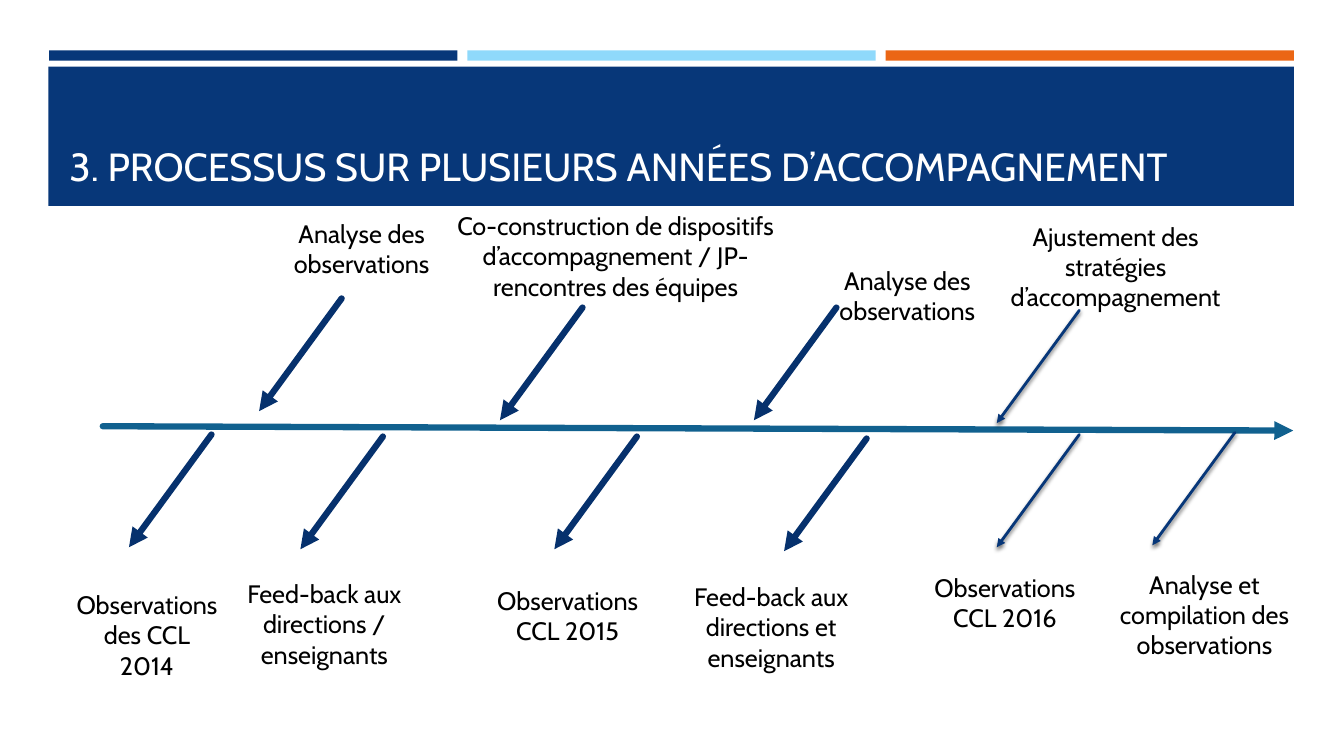
"""Build a slide showing a multi-year support process along a timeline."""
from dataclasses import dataclass

from lxml.etree import SubElement
from pptx import Presentation
from pptx.dml.color import RGBColor
from pptx.enum.shapes import MSO_CONNECTOR as Connector, MSO_SHAPE as Preset
from pptx.enum.text import MSO_ANCHOR as Anchor, MSO_AUTO_SIZE as AutoSize, PP_ALIGN as Align
from pptx.oxml.ns import qn
from pptx.slide import Slide
from pptx.util import Cm, Pt

COLORS = {
    "navy": "073779",
    "sky": "8FD9FB",
    "orange": "EB6615",
    "timeline": "11618F",
    "arrow": "06316D",
    "black": "000000",
    "white": "FFFFFF",
}
FONT = "Cabin"
BAR_LEFT, BAR_PITCH = 1.24, 10.54
ARROW_RUN, ARROW_DROP = -2.08, 2.84
LINE_HEIGHT, LABEL_PADDING = 0.77, 0.26


@dataclass(frozen=True)
class Box:
    left: float
    top: float
    width: float
    height: float


@dataclass(frozen=True)
class Label:
    text: str
    left: float
    top: float
    width: float = 5.03
    lines: int = 3


@dataclass(frozen=True)
class Step:
    label: Label
    arrow_left: float
    arrow_top: float
    thin: bool = False


STEPS = [
    Step(Label("Observations des CCL 2014", 1.65, 14.73, 4.11), 5.33, 10.95),
    Step(Label("Analyse des observations", 7.06, 5.38, 4.11, 2), 8.61, 7.52),
    Step(Label("Feed-back aux directions / enseignants", 5.66, 14.45), 9.65, 11),
    Step(Label("Co-construction de dispositifs d’accompagnement / JP-rencontres des équipes",
               10.69, 5.18, 9.65), 14.68, 7.75),
    Step(Label("Observations CCL 2015", 11.79, 14.63, lines=2), 16.05, 11),
    Step(Label("Analyse des observations", 20.35, 6.55, lines=2), 21.08, 7.75),
    Step(Label("Feed-back aux directions et enseignants", 16.92, 14.53), 21.84, 11.05),
    Step(Label("Ajustement des stratégies d’accompagnement", 25.12, 5.44, 5.99),
         27.2, 7.82, thin=True),
    Step(Label("Observations CCL 2016", 22.81, 14.3, lines=2), 27.2, 10.95, thin=True),
    Step(Label("Analyse et compilation des observations", 27.84, 14.22), 31.12, 10.9, thin=True),
]


def color(name: str) -> RGBColor:
    return RGBColor.from_string(COLORS[name])


def add_block(slide: Slide, box: Box, fill: str) -> None:
    shape = slide.shapes.add_shape(
        Preset.RECTANGLE, Cm(box.left), Cm(box.top), Cm(box.width), Cm(box.height))
    shape.shadow.inherit = False
    shape.fill.solid()
    shape.fill.fore_color.rgb = color(fill)
    shape.line.fill.background()


def add_text(slide: Slide, box: Box, text: str, size: int, ink: str,
             align: Align, anchor: Anchor, auto_size: AutoSize) -> None:
    shape = slide.shapes.add_textbox(
        Cm(box.left), Cm(box.top), Cm(box.width), Cm(box.height))
    frame = shape.text_frame
    frame.word_wrap = True
    frame.auto_size = auto_size
    frame.vertical_anchor = anchor
    paragraph = frame.paragraphs[0]
    paragraph.text = text
    paragraph.alignment = align
    paragraph.font.name = FONT
    paragraph.font.size = Pt(size)
    paragraph.font.color.rgb = color(ink)


def add_arrow(slide: Slide, left: float, top: float, run: float, drop: float,
              ink: str, weight: float, shadow: bool = False) -> None:
    connector = slide.shapes.add_connector(
        Connector.STRAIGHT, Cm(left), Cm(top), Cm(left + run), Cm(top + drop))
    connector.line.color.rgb = color(ink)
    connector.line.width = Pt(weight)
    properties = connector._element.spPr
    outline = properties.find(qn("a:ln"))
    outline.set("cap", "rnd")
    SubElement(outline, qn("a:tailEnd"), type="triangle")
    effects = SubElement(properties, qn("a:effectLst"))
    if shadow:
        outer = SubElement(effects, qn("a:outerShdw"), blurRad=str(Pt(3)),
                           dist=str(Pt(2)), dir="5400000", rotWithShape="0")
        tint = SubElement(outer, qn("a:srgbClr"), val=COLORS["black"])
        SubElement(tint, qn("a:alpha"), val="55000")


def add_label(slide: Slide, label: Label) -> None:
    height = label.lines * LINE_HEIGHT + LABEL_PADDING
    add_text(slide, Box(label.left, label.top, label.width, height), label.text, 18,
             "black", Align.CENTER, Anchor.TOP, AutoSize.SHAPE_TO_FIT_TEXT)


def add_step(slide: Slide, step: Step) -> None:
    ink, weight = ("navy", 2) if step.thin else ("arrow", 4.5)
    add_arrow(slide, step.arrow_left, step.arrow_top, ARROW_RUN, ARROW_DROP,
              ink, weight, shadow=step.thin)
    add_label(slide, step.label)


def main() -> None:
    presentation = Presentation()
    presentation.slide_width = Cm(33.87)
    presentation.slide_height = Cm(19.05)
    slide = presentation.slides.add_slide(presentation.slide_layouts[6])

    for index, fill in enumerate(("navy", "sky", "orange")):
        add_block(slide, Box(BAR_LEFT + index * BAR_PITCH, 1.27, 10.29, 0.26), fill)
    add_block(slide, Box(1.22, 1.68, 31.39, 3.51), "navy")
    add_text(slide, Box(1.5, 2.9, 30.63, 2), "3. PROCESSUS SUR PLUSIEURS ANNÉES D’ACCOMPAGNEMENT",
             28, "white", Align.LEFT, Anchor.BOTTOM, AutoSize.NONE)

    add_arrow(slide, 2.59, 10.74, 30, 0.11, "timeline", 4.5)
    for step in STEPS:
        add_step(slide, step)

    presentation.save("out.pptx")


if __name__ == "__main__":
    main()
